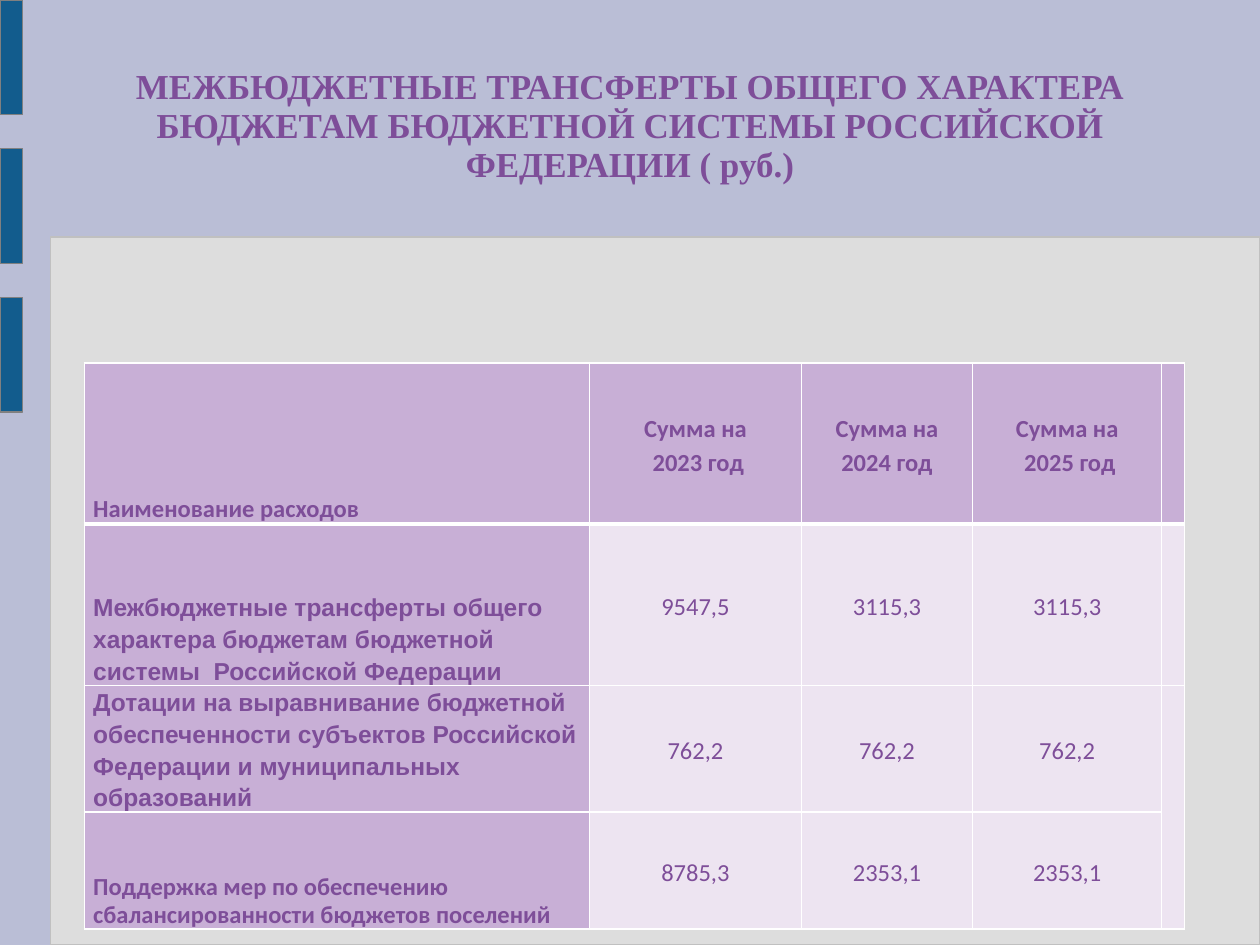
"""Build a slide with a table of intergovernmental budget transfers for 2023-2025."""
from lxml.etree import SubElement
from pptx import Presentation
from pptx.dml.color import RGBColor
from pptx.enum.shapes import MSO_SHAPE
from pptx.enum.text import MSO_ANCHOR, PP_ALIGN
from pptx.oxml.ns import qn
from pptx.util import Inches, Pt

BACKGROUND = RGBColor(0xBA, 0xBE, 0xD6)
PANEL = RGBColor(0xDD, 0xDD, 0xDD)
PANEL_LINE = RGBColor(0xC0, 0xC0, 0xC0)
BAR = RGBColor(0x12, 0x5C, 0x8D)
BAR_LINE = RGBColor(0x80, 0x80, 0x80)
PURPLE = RGBColor(0x7E, 0x4E, 0x99)
HEADER_FILL = RGBColor(0xC8, 0xAF, 0xD6)
VALUE_FILL = RGBColor(0xED, 0xE4, 0xF1)
WHITE = RGBColor(0xFF, 0xFF, 0xFF)

COLUMN_WIDTHS = [4.01, 1.68, 1.36, 1.5, 0.18]
ROW_HEIGHTS = [1.28, 1.28, 0.93, 0.93]
ROWS = [
    ["Наименование расходов", "Сумма на\n 2023 год", "Сумма на 2024 год", "Сумма на\n 2025 год", ""],
    ["Межбюджетные трансферты общего характера бюджетам бюджетной системы  Российской Федерации",
     "9547,5", "3115,3", "3115,3", ""],
    ["Дотации на выравнивание бюджетной обеспеченности субъектов Российской Федерации "
     "и муниципальных образований", "762,2", "762,2", "762,2", ""],
    ["Поддержка мер по обеспечению сбалансированности бюджетов поселений",
     "8785,3", "2353,1", "2353,1", ""],
]
ARIAL_ROWS = (1, 2)


def add_block(left, top, width, height, fill, line):
    block = page.shapes.add_shape(
        MSO_SHAPE.ROUNDED_RECTANGLE, Inches(left), Inches(top), Inches(width), Inches(height))
    block.adjustments[0] = 0
    block.shadow.inherit = False
    block.fill.solid()
    block.fill.fore_color.rgb = fill
    block.line.color.rgb = line
    block.line.width = Pt(0.75)


def set_borders(cell, bottom_width):
    properties = cell._tc.get_or_add_tcPr()
    widths = {"a:lnL": 1, "a:lnR": 1, "a:lnT": 1, "a:lnB": bottom_width}
    for position, (tag, width) in enumerate(widths.items()):
        border = SubElement(properties, qn(tag), w=str(Pt(width)))
        SubElement(SubElement(border, qn("a:solidFill")), qn("a:srgbClr"), val=str(WHITE))
        properties.insert(position, border)


deck = Presentation()
deck.slide_width, deck.slide_height = Inches(10), Inches(7.5)
page = deck.slides.add_slide(deck.slide_layouts[5])
page.background.fill.solid()
page.background.fill.fore_color.rgb = BACKGROUND

add_block(0.4, 1.88, 9.6, 5.62, PANEL, PANEL_LINE)
for index in range(3):
    add_block(0, 1.18 * index, 0.18, 0.91, BAR, BAR_LINE)

title = page.shapes.title
title.left, title.top = Inches(0.73), Inches(0.55)
title.width, title.height = Inches(8.54), Inches(1.25)
frame = title.text_frame
frame.text = ("МЕЖБЮДЖЕТНЫЕ ТРАНСФЕРТЫ ОБЩЕГО ХАРАКТЕРА БЮДЖЕТАМ БЮДЖЕТНОЙ СИСТЕМЫ "
              "РОССИЙСКОЙ ФЕДЕРАЦИИ ( руб.)")
frame.word_wrap = True
frame.vertical_anchor = MSO_ANCHOR.MIDDLE
frame.margin_left = frame.margin_right = frame.margin_top = frame.margin_bottom = 0
para = frame.paragraphs[0]
para.alignment = PP_ALIGN.CENTER
para.line_spacing = 0.93
para.font.size = Pt(20)
span = para.runs[0]
span.font.name = "Times New Roman"
span.font.size = Pt(20)
span.font.bold = True
span.font.color.rgb = PURPLE
para.add_line_break()

table = page.shapes.add_table(
    len(ROWS), len(COLUMN_WIDTHS), Inches(0.67), Inches(2.88),
    Inches(sum(COLUMN_WIDTHS)), Inches(sum(ROW_HEIGHTS))).table
for column, width in zip(table.columns, COLUMN_WIDTHS):
    column.width = Inches(width)
for row, height in zip(table.rows, ROW_HEIGHTS):
    row.height = Inches(height)

for row_index, texts in enumerate(ROWS):
    for column_index, text in enumerate(texts):
        cell = table.cell(row_index, column_index)
        is_header = row_index == 0
        is_name = column_index == 0
        cell.fill.solid()
        cell.fill.fore_color.rgb = HEADER_FILL if is_header or is_name else VALUE_FILL
        set_borders(cell, 3 if is_header else 1)
        cell.margin_left = cell.margin_right = Inches(0.07)
        cell.margin_top = cell.margin_bottom = 0
        cell.vertical_anchor = MSO_ANCHOR.BOTTOM if is_name else MSO_ANCHOR.MIDDLE
        cell.text_frame.text = text
        for para in cell.text_frame.paragraphs:
            para.alignment = PP_ALIGN.LEFT if is_name else PP_ALIGN.CENTER
            para.line_spacing = 0.93 if is_name and row_index == 3 else 1.15
            for span in para.runs:
                span.font.name = "Arial" if is_name and row_index in ARIAL_ROWS else "Calibri"
                span.font.size = Pt(14)
                span.font.bold = is_header or is_name
                span.font.color.rgb = PURPLE
table.cell(2, 4).merge(table.cell(3, 4))

deck.save("out.pptx")
